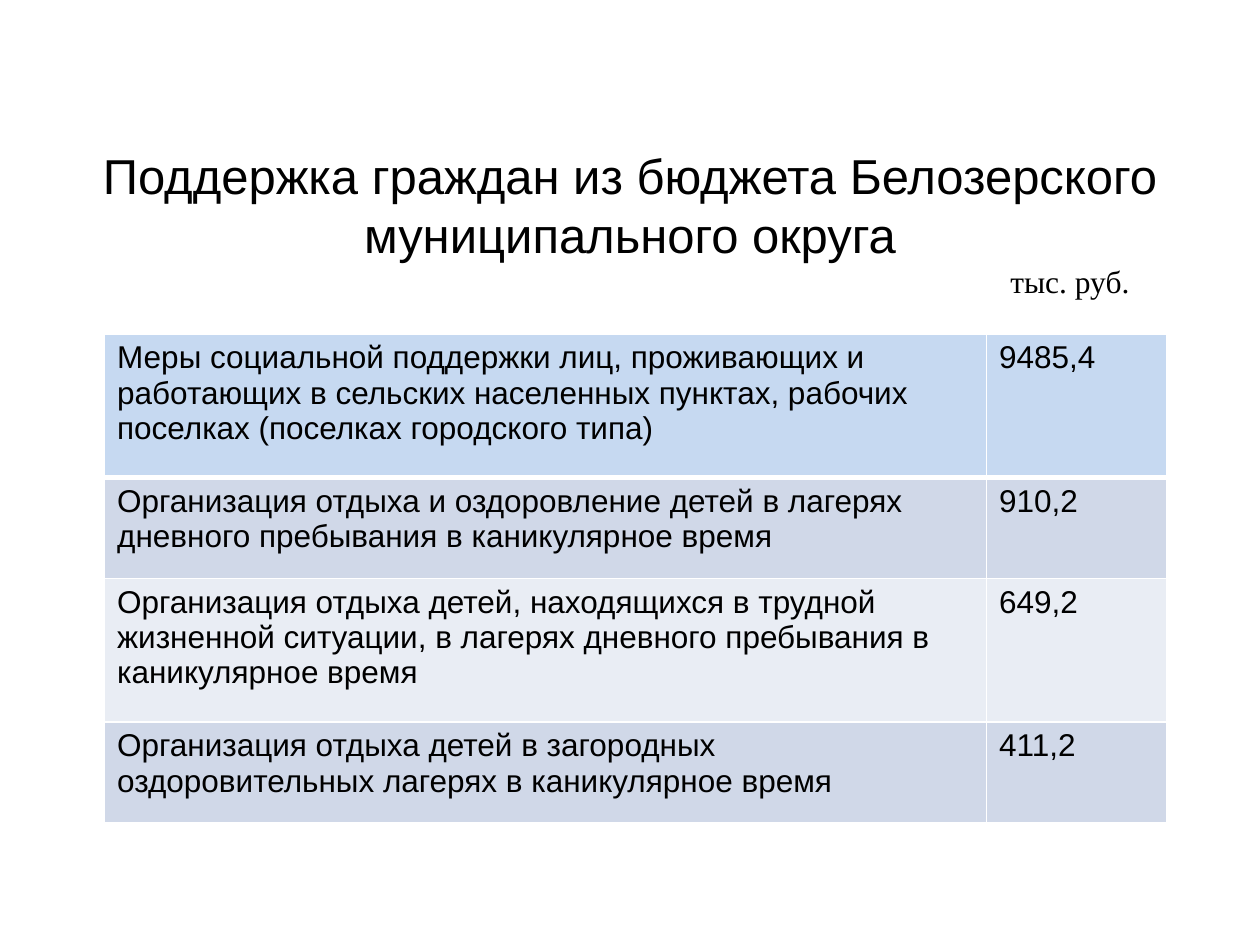
from lxml import etree
from pptx import Presentation
from pptx.dml.color import RGBColor
from pptx.enum.text import MSO_ANCHOR, PP_ALIGN
from pptx.oxml.ns import qn
from pptx.util import Inches, Pt

MID, TOP = MSO_ANCHOR.MIDDLE, MSO_ANCHOR.TOP
LEFT, CENTER = PP_ALIGN.LEFT, PP_ALIGN.CENTER

# Content
TITLE = "Поддержка граждан из бюджета Белозерского муниципального округа"
UNIT = "тыс. руб."
ROWS = [
    ("Меры социальной поддержки лиц, проживающих и работающих в сельских "
     "населенных пунктах, рабочих поселках (поселках городского типа)", "9485,4"),
    ("Организация отдыха и оздоровление детей в лагерях дневного "
     "пребывания в каникулярное время", "910,2"),
    ("Организация отдыха детей, находящихся в трудной жизненной ситуации, "
     "в лагерях дневного пребывания в каникулярное время", "649,2"),
    ("Организация отдыха детей в загородных оздоровительных лагерях "
     "в каникулярное время", "411,2"),
]

THEME = {
    "sans": "Arial", "serif": "Times New Roman",
    "title": 28, "body": 18,
    "ink": "000000", "line": "FFFFFF",
    "head": "C6D9F1", "bands": ("D0D8E8", "E9EDF4"),
}

# Layout in inches
WIDE, HIGH = 10, 7.5
TABLE_X, TABLE_Y = 0.83, 2.65
COLS = (7, 1.43)
TALL, SHORT = 1.14, 0.8


def style(para, size, face, align=LEFT):
    para.alignment = align
    for run in para.runs:
        run.font.size = Pt(size)
        run.font.name = face
        run.font.color.rgb = RGBColor.from_string(THEME["ink"])


def add_text(slide, box, text, size, face, align):
    frame = slide.shapes.add_textbox(*map(Inches, box)).text_frame
    frame.word_wrap = True
    frame.vertical_anchor = MID
    frame.text = text
    style(frame.paragraphs[0], size, face, align)


def add_edges(cell, widths):
    props = cell._tc.get_or_add_tcPr()
    for spot, (side, width) in enumerate(widths.items()):
        edge = etree.Element(qn("a:ln" + side), w=str(Pt(width)))
        fill = etree.SubElement(edge, qn("a:solidFill"))
        etree.SubElement(fill, qn("a:srgbClr"), val=THEME["line"])
        props.insert(spot, edge)


def add_grid(slide):
    highs = [TALL if i % 2 == 0 else SHORT for i in range(len(ROWS))]
    box = (TABLE_X, TABLE_Y, sum(COLS), sum(highs))
    table = slide.shapes.add_table(
        len(ROWS), len(COLS), *map(Inches, box)).table
    for col, width in zip(table.columns, COLS):
        col.width = Inches(width)
    for i, (row, high, texts) in enumerate(zip(table.rows, highs, ROWS)):
        row.height = Inches(high)
        tint = THEME["bands"][(i - 1) % 2] if i else THEME["head"]
        # A thick rule parts the first row from the rest
        edges = {"L": 1, "R": 1, "T": 3 if i == 1 else 1, "B": 1 if i else 3}
        for cell, text in zip(row.cells, texts):
            cell.text = text
            cell.vertical_anchor = TOP
            style(cell.text_frame.paragraphs[0], THEME["body"], THEME["sans"])
            cell.fill.solid()
            cell.fill.fore_color.rgb = RGBColor.from_string(tint)
            add_edges(cell, edges)


def main():
    deck = Presentation()
    deck.slide_width, deck.slide_height = Inches(WIDE), Inches(HIGH)
    slide = deck.slides.add_slide(deck.slide_layouts[6])
    # Heading and unit
    add_text(slide, (0, 1.1, WIDE, 1.05), TITLE,
             THEME["title"], THEME["sans"], CENTER)
    add_text(slide, (7.92, 2.03, 1.3, 0.4), UNIT,
             THEME["body"], THEME["serif"], LEFT)
    # Table of sums
    add_grid(slide)
    deck.save("out.pptx")


if __name__ == "__main__":
    main()
